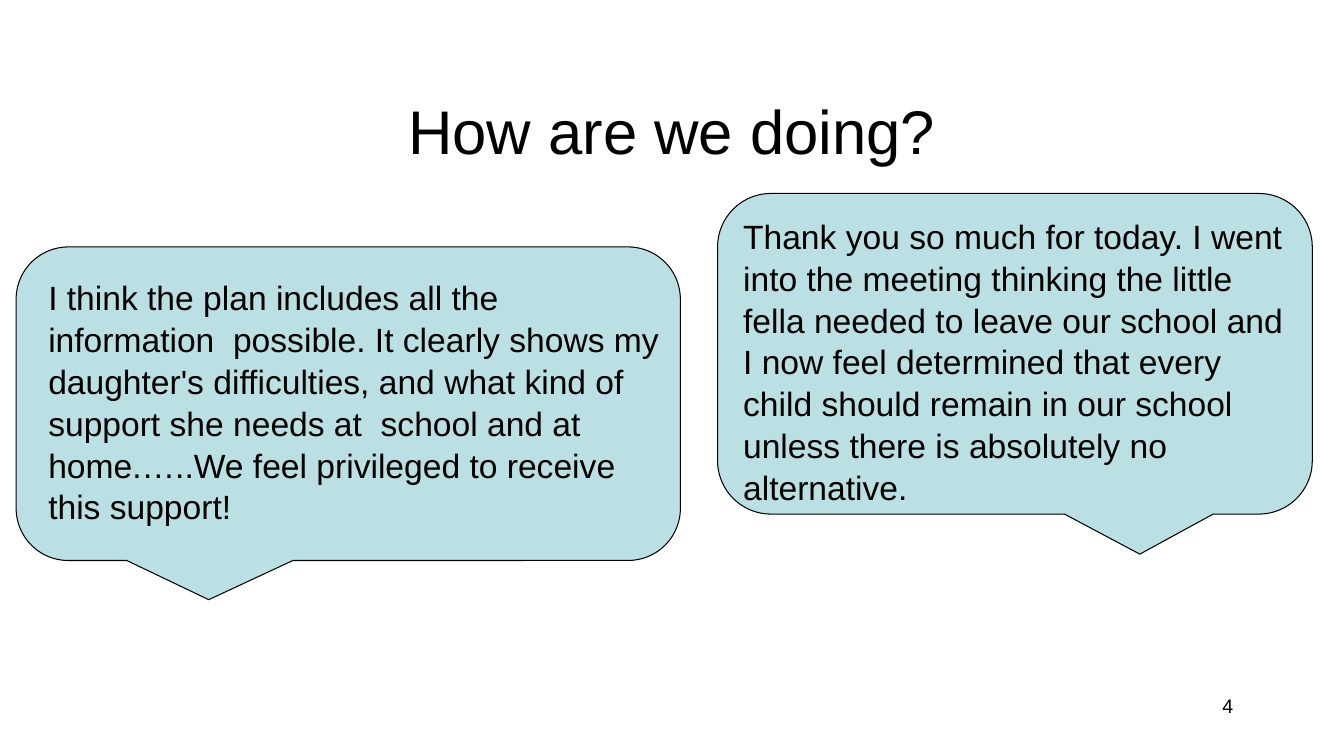
from pptx import Presentation
from pptx.dml.color import RGBColor
from pptx.enum.shapes import MSO_SHAPE
from pptx.enum.text import MSO_ANCHOR, PP_ALIGN
from pptx.util import Pt

BLACK = RGBColor(0x00, 0x00, 0x00)
PALE_TEAL = RGBColor(0xBB, 0xE0, 0xE3)
CALLOUT = MSO_SHAPE.ROUNDED_RECTANGULAR_CALLOUT
TOP, MIDDLE = MSO_ANCHOR.TOP, MSO_ANCHOR.MIDDLE
LEFT, CENTER, RIGHT = PP_ALIGN.LEFT, PP_ALIGN.CENTER, PP_ALIGN.RIGHT
QUOTE_SPACING = 1.04


def points(*lengths):
    return [Pt(length) for length in lengths]


def write(holder, text, size, align, anchor, spacing=1.0):
    frame = holder.text_frame
    frame.word_wrap = True
    frame.vertical_anchor = anchor
    paragraph = frame.paragraphs[0]
    paragraph.text = text
    paragraph.alignment = align
    paragraph.line_spacing = spacing
    font_format = {"name": "Arial", "size": Pt(size)}
    for attribute, value in font_format.items():
        setattr(paragraph.font, attribute, value)
    paragraph.font.color.rgb = BLACK


deck = Presentation()
deck.slide_width, deck.slide_height = points(960, 540)
slide = deck.slides.add_slide(deck.slide_layouts[5])

# Title
title = slide.shapes.title
title.left, title.top, title.width, title.height = points(72, 48, 816, 90)
write(title, "How are we doing?", 44, CENTER, MIDDLE)

# Page number
page_number = slide.shapes.add_textbox(*points(688, 492, 200, 36))
write(page_number, "4", 14, RIGHT, TOP)

# Speech bubbles: place and horizontal offset of the tip
bubbles = []
for place, tip_offset in [
    ((11.5, 176.4, 474.5, 224), -0.21),
    ((512.6, 138.2, 424.8, 229), 0.21),
]:
    bubble = slide.shapes.add_shape(CALLOUT, *points(*place))
    bubble.adjustments[0] = tip_offset
    bubble.shadow.inherit = False
    bubble.fill.solid()
    bubble.fill.fore_color.rgb = PALE_TEAL
    bubble.line.color.rgb = BLACK
    bubble.line.width = Pt(0.75)
    bubbles.append(bubble)
parent_bubble, school_bubble = bubbles

# Quotes
write(
    school_bubble,
    "Thank you so much for today. I went into the meeting thinking the "
    "little fella needed to leave our school and I now feel determined that "
    "every child should remain in our school unless there is absolutely no "
    "alternative.",
    24, LEFT, TOP, QUOTE_SPACING,
)
parent_quote = slide.shapes.add_textbox(*points(27.4, 193, 458.6, 181.4))
write(
    parent_quote,
    "I think the plan includes all the information  possible. It clearly "
    "shows my daughter's difficulties, and what kind of support she needs "
    "at  school and at home.…..We feel privileged to receive this support!",
    24, LEFT, TOP, QUOTE_SPACING,
)

deck.save("out.pptx")
